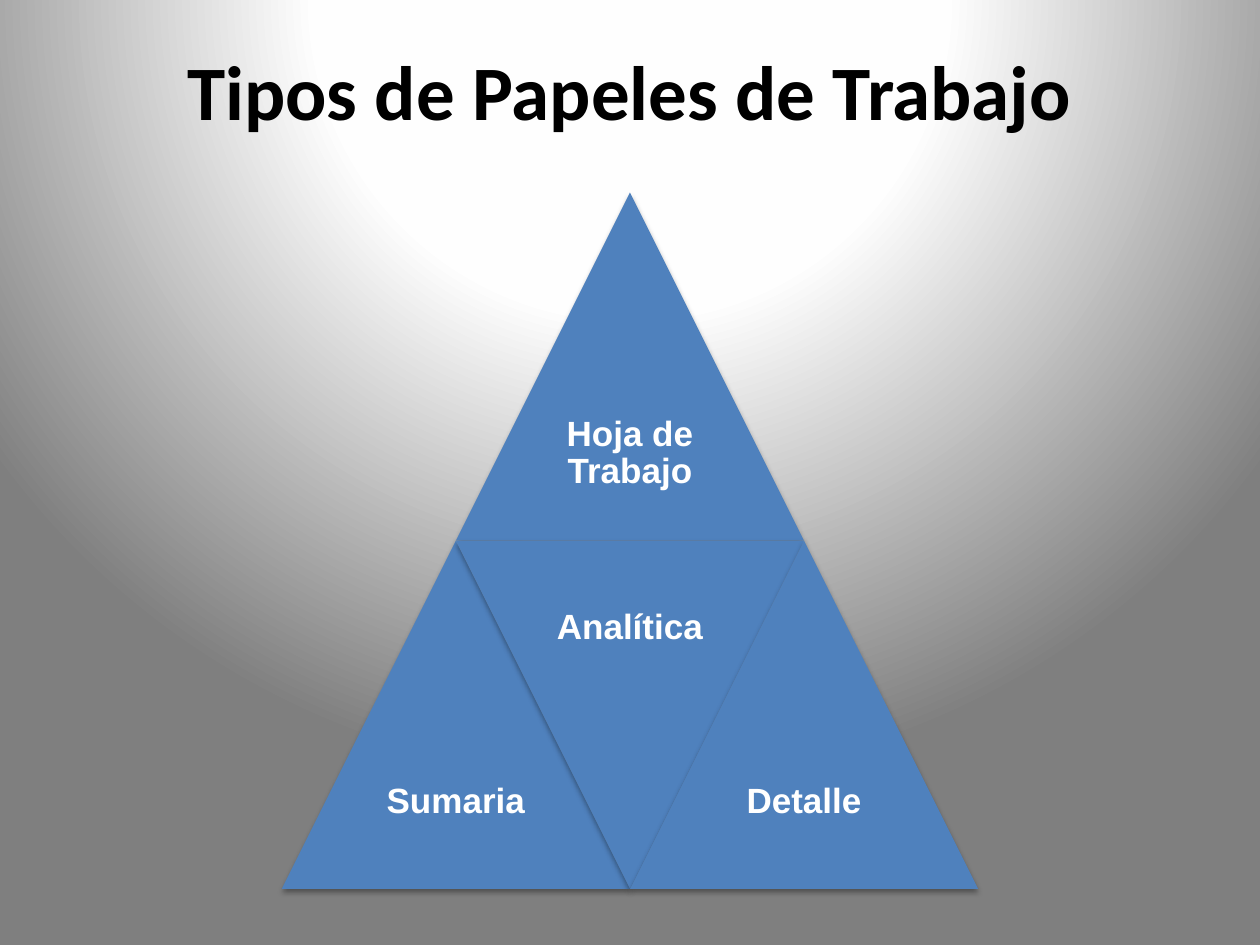
from lxml import etree
from pptx import Presentation
from pptx.dml.color import RGBColor
from pptx.enum.shapes import MSO_SHAPE
from pptx.enum.text import MSO_ANCHOR, PP_ALIGN
from pptx.oxml import parse_xml
from pptx.oxml.ns import nsdecls, qn
from pptx.util import Pt

COLORS = {
    "title": "000000",
    "triangle": "4F81BD",
    "label": "FFFFFF",
    "shadow": "000000",
    "center": "FFFFFF",
    "middle": "FEFEFE",
    "edge": "7F7F7F",
}


def add_background(slide):
    """Give the slide a circular gradient centred above its top edge."""
    stops = ((0, "center"), (40, "middle"), (100, "edge"))
    stop_xml = "".join(
        f'<a:gs pos="{position * 1000}"><a:srgbClr val="{COLORS[name]}"/></a:gs>'
        for position, name in stops
    )
    background = parse_xml(
        f'<p:bg {nsdecls("p", "a")}><p:bgPr><a:gradFill rotWithShape="1">'
        f'<a:gsLst>{stop_xml}</a:gsLst><a:path path="circle">'
        '<a:fillToRect l="50000" t="-80000" r="50000" b="180000"/></a:path>'
        "</a:gradFill><a:effectLst/></p:bgPr></p:bg>"
    )
    slide.element.cSld.insert(0, background)


def add_text(shapes, box, text, size, font_name, color):
    textbox = shapes.add_textbox(*map(Pt, box))
    text_frame = textbox.text_frame
    text_frame.word_wrap = True
    text_frame.text = text
    paragraph = text_frame.paragraphs[0]
    paragraph.alignment = PP_ALIGN.CENTER
    font = paragraph.runs[0].font
    font.size, font.name, font.bold = Pt(size), font_name, True
    font.color.rgb = RGBColor.from_string(color)
    return text_frame


def add_shadow(shape):
    shape.shadow.inherit = False
    effects = shape.element.spPr.find(qn("a:effectLst"))
    shadow = etree.SubElement(
        effects, qn("a:outerShdw"), blurRad=str(Pt(3.1)), dist=str(Pt(1.8)),
        dir="5400000", rotWithShape="0",
    )
    color = etree.SubElement(shadow, qn("a:srgbClr"), val=COLORS["shadow"])
    etree.SubElement(color, qn("a:alpha"), val="35000")


def add_triangle(shapes, left, top, side, text, inverted):
    triangle = shapes.add_shape(
        MSO_SHAPE.ISOSCELES_TRIANGLE, Pt(left), Pt(top), Pt(side), Pt(side)
    )
    triangle.rotation = 180 if inverted else 0
    triangle.fill.solid()
    triangle.fill.fore_color.rgb = RGBColor.from_string(COLORS["triangle"])
    triangle.line.fill.background()
    add_shadow(triangle)

    half = side / 2
    label_top = top if inverted else top + half
    text_frame = add_text(
        shapes, (left + side / 4, label_top, half, half), text, 20, "Arial", COLORS["label"]
    )
    text_frame.vertical_anchor = MSO_ANCHOR.MIDDLE
    text_frame.margin_left = text_frame.margin_right = Pt(6)
    text_frame.margin_top = text_frame.margin_bottom = Pt(6)
    paragraph = text_frame.paragraphs[0]
    paragraph.line_spacing = 0.9
    paragraph.space_after = Pt(7)


def add_pyramid(slide, left, top, size):
    """Divide a large triangle into four equal ones, the middle one inverted."""
    shapes = slide.shapes.add_group_shape().shapes
    side = size / 2
    # Label, column in half sides, row, inverted
    parts = (
        ("Hoja de Trabajo", 1, 0, False),
        ("Sumaria", 0, 1, False),
        ("Analítica", 1, 1, True),
        ("Detalle", 2, 1, False),
    )
    for text, column, row, inverted in parts:
        add_triangle(
            shapes, left + column * side / 2, top + row * side, side, text, inverted
        )


def main():
    presentation = Presentation()
    presentation.slide_width, presentation.slide_height = Pt(720), Pt(540)
    slide = presentation.slides.add_slide(presentation.slide_layouts[6])
    add_background(slide)
    add_text(
        slide.shapes, (36, 21.6, 648, 90), "Tipos de Papeles de Trabajo",
        44, "Calibri", COLORS["title"],
    )
    add_pyramid(slide, 161, 110, 398)
    presentation.save("out.pptx")


if __name__ == "__main__":
    main()
